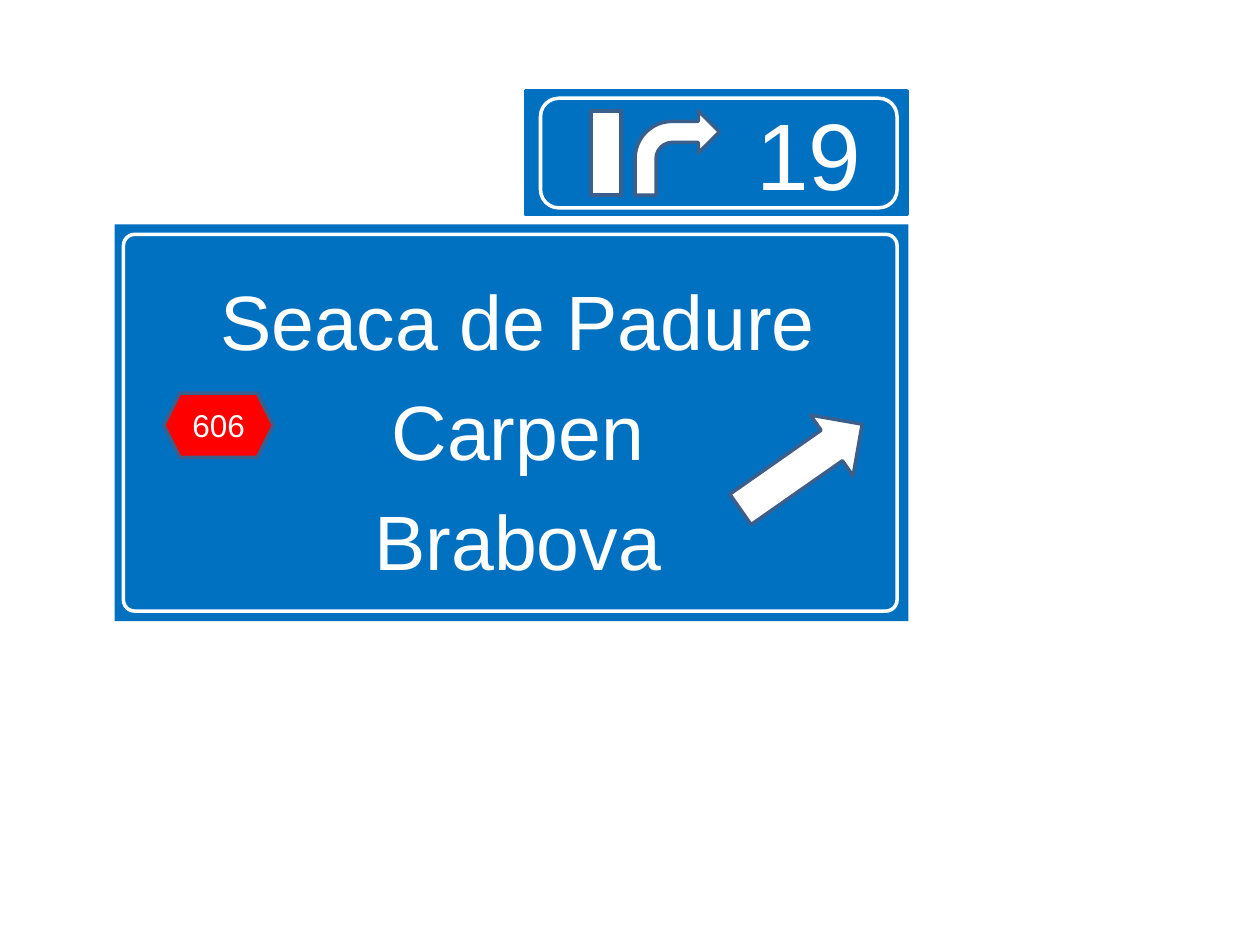
"""Build a road sign slide for a motorway exit."""
from pptx import Presentation
from pptx.dml.color import RGBColor
from pptx.enum.shapes import MSO_SHAPE
from pptx.enum.text import MSO_ANCHOR, PP_ALIGN
from pptx.util import Inches, Pt

BLUE, WHITE, RED, EDGE = "0070C0", "FFFFFF", "FF0000", "3A5F8C"


def color(value):
    """Turn a hex string into a colour."""
    return RGBColor.from_string(value)


def add_shape(s, kind, box, fill=None, line=None, adj=(), rot=0):
    """Add a preset shape with the given fill and outline."""
    sp = s.shapes.add_shape(kind, *(Inches(v) for v in box))
    sp.shadow.inherit = False
    sp.rotation = rot
    for i, value in enumerate(adj):
        sp.adjustments[i] = value
    if fill:
        sp.fill.solid()
        sp.fill.fore_color.rgb = color(fill)
    else:
        sp.fill.background()
    if line:
        sp.line.color.rgb = color(line)
        sp.line.width = Pt(2)
    else:
        sp.line.fill.background()
    return sp


def add_text(sp, lines, size, insets=(0.1, 0.05, 0.1, 0.05),
             anchor=MSO_ANCHOR.MIDDLE, before=0):
    """Write centred white lines into a shape."""
    tf = sp.text_frame
    tf.word_wrap = True
    tf.vertical_anchor = anchor
    tf.margin_left, tf.margin_top, tf.margin_right, tf.margin_bottom = (
        Inches(v) for v in insets)
    for i, text in enumerate(lines):
        p = tf.add_paragraph() if i else tf.paragraphs[0]
        p.alignment = PP_ALIGN.CENTER
        p.space_before = Pt(before)
        r = p.add_run()
        r.text = text
        r.font.name = "Arial"
        r.font.size = Pt(size)
        r.font.color.rgb = color(WHITE)


def add_direction_sign(s):
    """Draw the large sign with destinations, road number and arrow."""
    panel = add_shape(s, MSO_SHAPE.RECTANGLE, (0.91, 1.78, 6.3, 3.15), BLUE)
    add_text(panel, ("Seaca de Padure", "Carpen", "Brabova"), 44,
             (0.2, 0.39, 0.1, 0.24), MSO_ANCHOR.TOP, 10)
    add_shape(s, MSO_SHAPE.RIGHT_ARROW, (5.77, 3.41, 1.18, 0.59),
              WHITE, EDGE, rot=325)
    road = add_shape(s, MSO_SHAPE.HEXAGON, (1.3, 3.12, 0.87, 0.51), RED, EDGE)
    add_text(road, ("606",), 18)
    add_shape(s, MSO_SHAPE.ROUNDED_RECTANGLE, (0.98, 1.86, 6.14, 2.99),
              line=WHITE, adj=(0.03,))


def add_exit_sign(s):
    """Draw the small sign with the exit symbol and number."""
    panel = add_shape(s, MSO_SHAPE.ROUNDED_RECTANGLE, (4.17, 0.72, 3.03, 0.98),
                      BLUE, BLUE, (0,))
    add_text(panel, ("19",), 54, (1.57, 0.05, 0.1, 0.05))
    add_shape(s, MSO_SHAPE.RECTANGLE, (4.69, 0.88, 0.24, 0.67), WHITE, EDGE)
    add_shape(s, MSO_SHAPE.BENT_ARROW, (5.04, 0.88, 0.67, 0.67), WHITE, EDGE,
              (0.25, 0.25, 0.25, 0.44))
    add_shape(s, MSO_SHAPE.ROUNDED_RECTANGLE, (4.29, 0.78, 2.83, 0.87),
              line=WHITE)


def main():
    """Create the slide and save it."""
    prs = Presentation()
    prs.slide_width, prs.slide_height = Inches(10), Inches(7.5)
    s = prs.slides.add_slide(prs.slide_layouts[6])
    add_direction_sign(s)
    add_exit_sign(s)
    prs.save("out.pptx")


if __name__ == "__main__":
    main()
